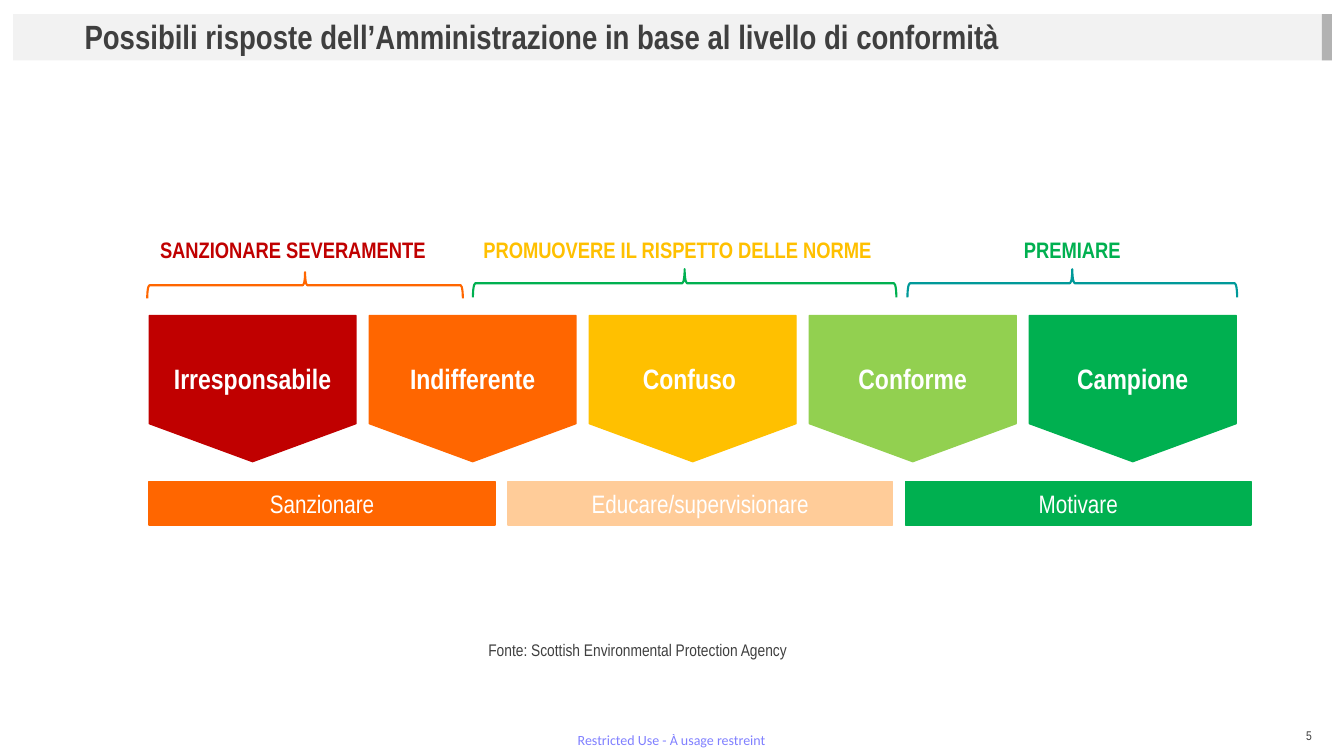
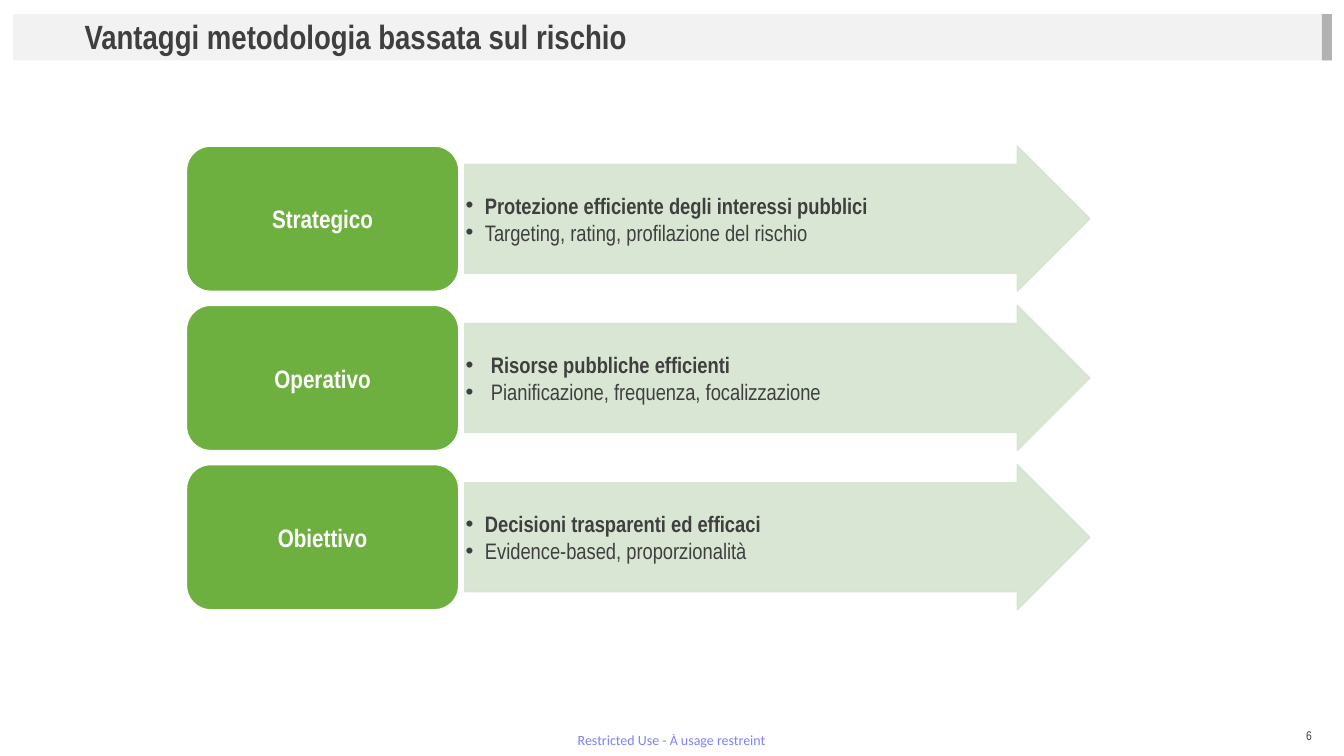
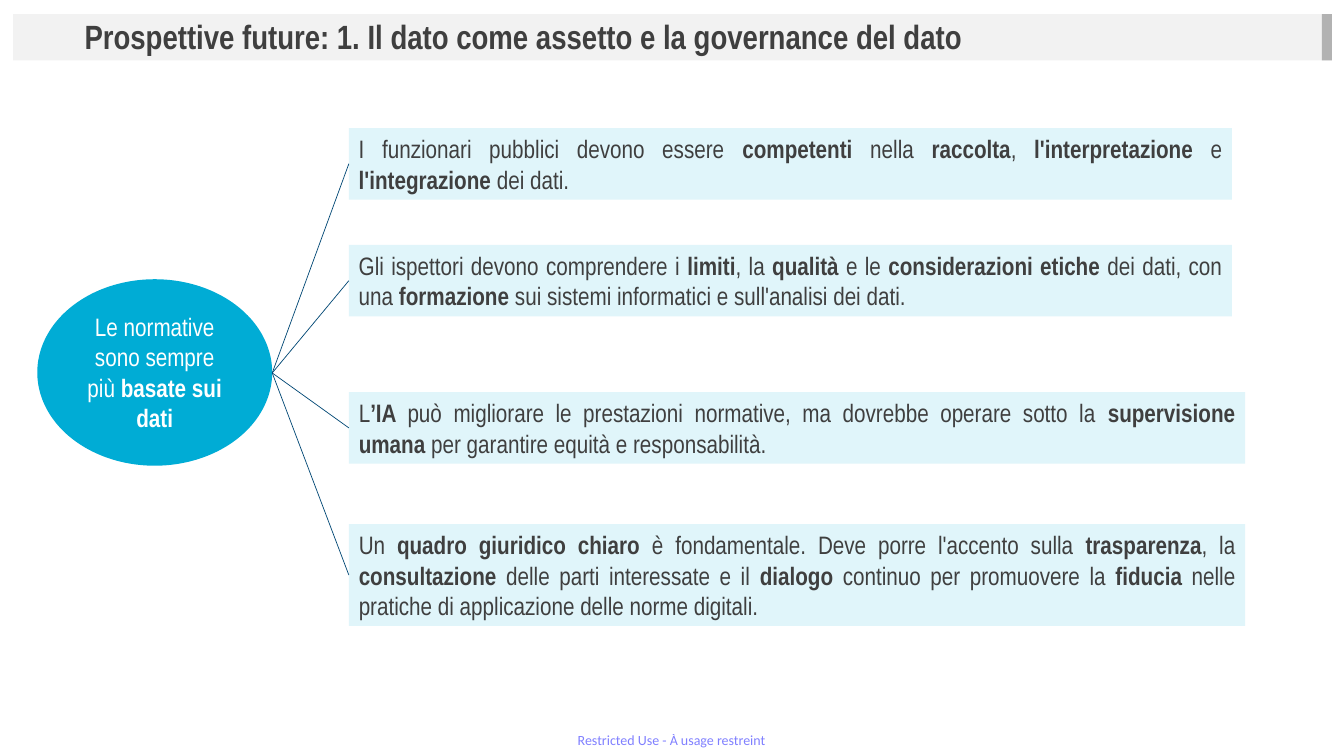
from dataclasses import dataclass

from lxml.etree import SubElement
from pptx import Presentation
from pptx.dml.color import RGBColor
from pptx.enum.shapes import MSO_CONNECTOR, MSO_SHAPE as SHAPE
from pptx.enum.text import MSO_ANCHOR as ANCHOR, PP_ALIGN as ALIGN
from pptx.oxml.ns import qn
from pptx.util import Pt

PX = 9144  # 100 px to the inch


@dataclass(frozen=True)
class Theme:
    font: str = "Arial Narrow"
    footer_font: str = "Calibri"
    ink: str = "3F3F3F"
    white: str = "FFFFFF"
    band: str = "F2F2F2"
    band_end: str = "B2B2B2"
    footer: str = "0000FF"
    red: str = "C00000"
    orange: str = "FF6600"
    peach: str = "FFCC99"
    amber: str = "FFC000"
    lime: str = "92D050"
    green: str = "00B050"
    teal: str = "009999"
    leaf: str = "6EB03F"
    sage: str = "D5E4CF"
    cyan: str = "00ACD5"
    ice: str = "E0F5FA"
    navy: str = "004775"
    title_size: int = 24
    step_size: int = 20
    body_size: int = 18
    label_size: int = 16
    source_size: int = 12
    footer_size: int = 10
    number_size: int = 9


T = Theme()

# Content; **...** marks bold
FOOTER = "Restricted Use - À usage restreint"

RESPONSES = {
    "title": "Possibili risposte dell’Amministrazione in base al livello di conformità",
    "steps": [
        ("Irresponsabile", T.red), ("Indifferente", T.orange), ("Confuso ", T.amber),
        ("Conforme", T.lime), ("Campione", T.green),
    ],
    # label, its colour, left, width; brace colour, left, top, width, height
    "groups": [
        ("SANZIONARE SEVERAMENTE", T.red, 112, 357, T.orange, 146, 270, 313, 26),
        ("PROMUOVERE IL RISPETTO DELLE NORME ", T.amber, 469, 411, T.green, 469, 267, 420, 28),
        ("PREMIARE", T.green, 885, 357, T.teal, 900, 267, 327, 28),
    ],
    "bars": [
        ("Sanzionare", T.orange, 343), ("Educare/supervisionare", T.peach, 381),
        ("Motivare", T.green, 343),
    ],
    "source": "Fonte: Scottish Environmental Protection Agency",
}

ADVANTAGES = {
    "title": "Vantaggi metodologia bassata sul rischio",
    # name, bullet indent, points
    "rows": [
        ("Strategico", 19, ["**Protezione efficiente degli interessi pubblici**",
                            "Targeting, rating, profilazione del rischio"]),
        ("Operativo", 25, ["**Risorse pubbliche efficienti**",
                           "Pianificazione, frequenza, focalizzazione"]),
        ("Obiettivo", 19, ["**Decisioni trasparenti ed efficaci**",
                           "Evidence-based, proporzionalità"]),
    ],
}

PROSPECTS = {
    "title": "Prospettive future: 1. Il dato come assetto e la governance del dato",
    "hub": "Le normative sono sempre più **basate sui dati**",
    # top, width, height, text
    "boxes": [
        (127, 876, 71, "I funzionari pubblici devono essere **competenti **nella **raccolta**, "
                       "**l'interpretazione** e **l'integrazione **dei dati."),
        (243, 876, 71, "Gli ispettori devono comprendere i **limiti**, la **qualità** e le "
                       "**considerazioni etiche **dei dati, con una **formazione** sui sistemi "
                       "informatici e sull'analisi dei dati."),
        (389, 889, 71, "L**’IA **può migliorare le prestazioni normative, ma dovrebbe operare "
                       "sotto la **supervisione umana **per garantire equità e responsabilità."),
        (520, 889, 101, "Un **quadro giuridico chiaro **è fondamentale. Deve porre l'accento "
                        "sulla **trasparenza**, la **consultazione **delle parti interessate e "
                        "il **dialogo** continuo per promuovere la **fiducia **nelle pratiche "
                        "di applicazione delle norme digitali."),
    ],
}


# Drawing helpers
def color(code):
    return RGBColor.from_string(code)


def emu(*lengths):
    return [round(length * PX) for length in lengths]


def fade(shape, percent):
    for tint in shape.element.iter(qn("a:srgbClr")):
        SubElement(tint, qn("a:alpha"), val=str(percent * 1000))


def add_bullet(para, indent):
    props = para._p.get_or_add_pPr()
    props.set("marL", str(indent * PX))
    props.set("indent", str(-indent * PX))
    SubElement(props, qn("a:buFont"), typeface="Arial")
    SubElement(props, qn("a:buChar"), char="•")


def write(shape, *texts, size=T.body_size, ink=T.ink, font=T.font, bold=False,
          align=ALIGN.LEFT, anchor=ANCHOR.TOP, insets=(10, 5), spacing=None, bullet=None):
    frame = shape.text_frame
    frame.word_wrap = True
    frame.vertical_anchor = anchor
    frame.margin_left = frame.margin_right = insets[0] * PX
    frame.margin_top = frame.margin_bottom = insets[1] * PX
    for index, text in enumerate(texts):
        para = frame.add_paragraph() if index else frame.paragraphs[0]
        para.alignment = align
        if spacing:
            para.line_spacing = spacing
        if bullet:
            add_bullet(para, bullet)
        for part, words in enumerate(text.split("**")):
            if words:
                span = para.add_run()
                span.text = words
                span.font.name = font
                span.font.size = Pt(size)
                span.font.bold = bold or part % 2 == 1
                span.font.color.rgb = color(ink)


def add_label(page, text, left, top, width, height, **style):
    box = page.shapes.add_textbox(*emu(left, top, width, height))
    write(box, text, **style)
    return box


def draw(page, kind, left, top, width, height, fill=None, line=None, weight=1, quarter=False):
    """Place a shape by its visible frame; quarter turns it by 90 degrees."""
    if quarter:
        left, top = left + (width - height) / 2, top + (height - width) / 2
        width, height = height, width
    shape = page.shapes.add_shape(kind, *emu(left, top, width, height))
    shape.shadow.inherit = False
    shape.rotation = 90 if quarter else 0
    if fill:
        shape.fill.solid()
        shape.fill.fore_color.rgb = color(fill)
    else:
        shape.fill.background()
    if line:
        shape.line.color.rgb = color(line)
        shape.line.width = Pt(weight)
    else:
        shape.line.fill.background()
    return shape


def add_page(deck, title, number=None):
    page = deck.slides.add_slide(deck.slide_layouts[6])
    draw(page, SHAPE.RECTANGLE, 13, 14, 1308, 46, T.band)
    draw(page, SHAPE.RECTANGLE, 1311, 14, 10, 46, T.band_end)
    footer = add_label(page, FOOTER, 573, 726, 191, 17, size=T.footer_size, ink=T.footer,
                       font=T.footer_font, insets=(0, 0))
    fade(footer, 50)
    add_label(page, title, 74, 15, 1237, 46, size=T.title_size, bold=True, spacing=0.9)
    if number:
        add_label(page, number, 1011, 710, 300, 40, size=T.number_size, align=ALIGN.RIGHT,
                  anchor=ANCHOR.MIDDLE)
    return page


# Slides
def build_responses(deck):
    page = add_page(deck, RESPONSES["title"], "5")
    centred = {"align": ALIGN.CENTER}
    for index, (name, fill) in enumerate(RESPONSES["steps"]):
        left = 148 + 218.25 * index
        arrow = draw(page, SHAPE.PENTAGON, left, 313, 205, 145, fill, fill, quarter=True)
        arrow.adjustments[0] = 0.26
        add_label(page, name, left + 12, 354, 181, 45, size=T.step_size, ink=T.white,
                  bold=True, **centred)
    for label, ink, left, width, line, *brace in RESPONSES["groups"]:
        draw(page, SHAPE.LEFT_BRACE, *brace, line=line, weight=1.5, quarter=True)
        add_label(page, label, left, 229, width, 38, size=T.label_size, ink=ink, bold=True,
                  **centred)
    left = 148
    for name, fill, width in RESPONSES["bars"]:
        bar = draw(page, SHAPE.RECTANGLE, left, 478, width, 43, fill, fill)
        write(bar, name, ink=T.white, anchor=ANCHOR.MIDDLE, **centred)
        left += width + 13
    add_label(page, RESPONSES["source"], 272, 630, 721, 30, size=T.source_size, **centred)


def build_advantages(deck):
    page = add_page(deck, ADVANTAGES["title"], "6")
    for index, (name, indent, points) in enumerate(ADVANTAGES["rows"]):
        top = 145 + 158 * index
        arrow = draw(page, SHAPE.RIGHT_ARROW, 461, top, 620, 144, T.sage, T.sage)
        arrow.adjustments[0] = 0.75
        fade(arrow, 90)
        write(arrow, *points, size=T.label_size, anchor=ANCHOR.MIDDLE, insets=(1, 1),
              bullet=indent)
        card = draw(page, SHAPE.ROUNDED_RECTANGLE, 185, top, 270, 144, T.leaf, T.white)
        write(card, name, ink=T.white, bold=True, align=ALIGN.CENTER, anchor=ANCHOR.MIDDLE)


def build_prospects(deck):
    page = add_page(deck, PROSPECTS["title"])
    hub = draw(page, SHAPE.FLOWCHART_CONNECTOR, 37, 277, 233, 185, T.cyan)
    write(hub, PROSPECTS["hub"], ink=T.white, align=ALIGN.CENTER)
    for top, width, height, text in PROSPECTS["boxes"]:
        box = draw(page, SHAPE.RECTANGLE, 346, top, width, height, T.ice)
        write(box, text, align=ALIGN.JUSTIFY, anchor=ANCHOR.MIDDLE)
        link = page.shapes.add_connector(MSO_CONNECTOR.STRAIGHT,
                                         *emu(270, 370, 346, top + height / 2))
        link.end_connect(box, 1)
        link.line.color.rgb = color(T.navy)
        link.line.width = Pt(0.5)
        SubElement(link.element.spPr, qn("a:effectLst"))


def main():
    deck = Presentation()
    deck.slide_width, deck.slide_height = emu(1333, 750)
    build_responses(deck)
    build_advantages(deck)
    build_prospects(deck)
    deck.save("out.pptx")


if __name__ == "__main__":
    main()
